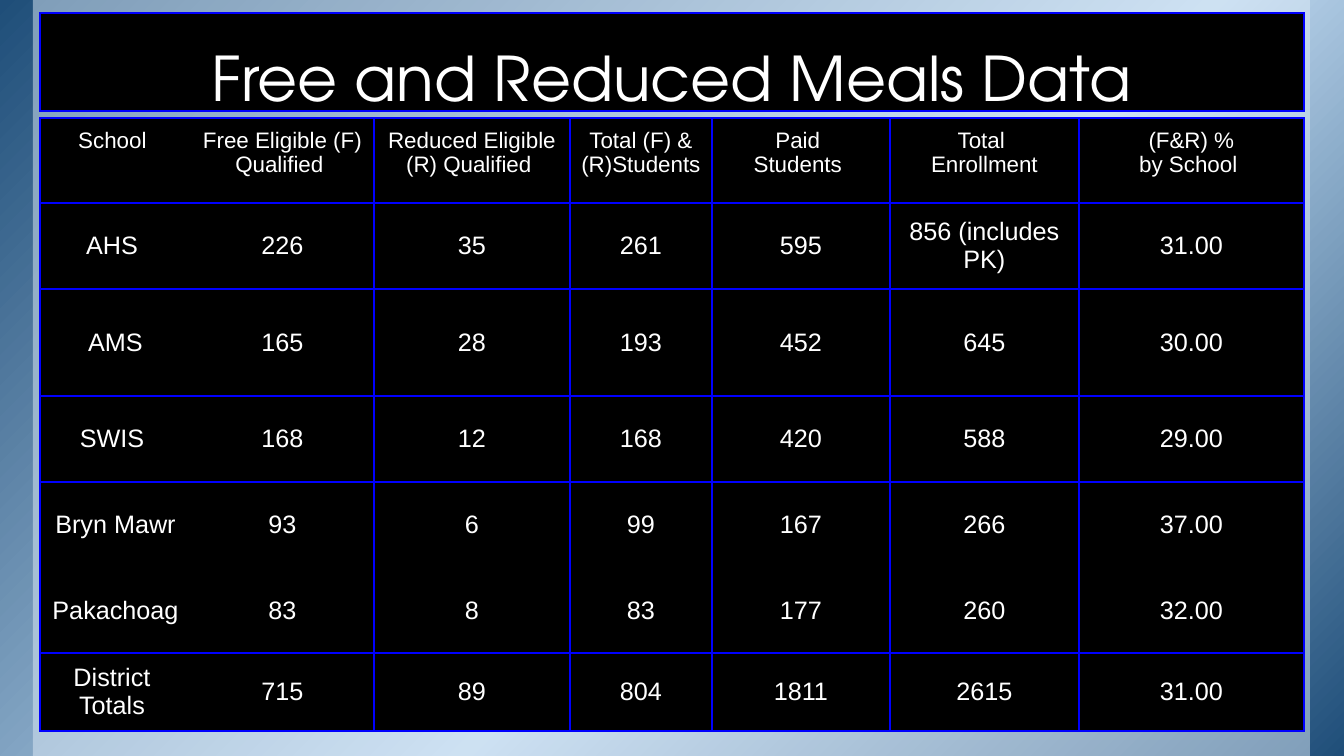
from copy import deepcopy
from dataclasses import dataclass

from lxml.etree import SubElement
from pptx import Presentation
from pptx.dml.color import RGBColor
from pptx.enum.shapes import MSO_SHAPE
from pptx.enum.text import MSO_ANCHOR, PP_ALIGN
from pptx.oxml.ns import qn
from pptx.util import Pt

SCALE = 914400 / 100.8
WIDE, HIGH = 1344, 756


@dataclass(frozen=True)
class Theme:
    navy: str = "1F4E79"
    sky: str = "BDD7EE"
    pale: str = "DEEBF7"
    cell: str = "000000"
    line: str = "0000FF"
    ink: str = "FFFFFF"
    title_font: str = "TeX Gyre Adventor"
    font: str = "Arial"
    title_size: int = 44
    head_size: int = 16
    size: int = 18
    rule: float = 1.5


THEME = Theme()
TITLE = "Free and Reduced Meals Data"
COLS = [151, 183, 196, 142, 178, 189, 225]
ROWS = [85, 86, 107, 86, 86, 85, 78]
HEADS = ["School ", "Free Eligible (F)\nQualified ", "Reduced Eligible (R) Qualified ",
         "Total (F) &\n(R)Students", "Paid \nStudents ", "Total \nEnrollment",
         "(F&R) %\nby School "]
MEALS = [
    ["AHS ", "226", "35", "261", "595", "856 (includes PK)", "31.00"],
    ["AMS", "165", "28", "193", "452", "645", "30.00"],
    ["SWIS ", "168", "12", "168", "420", "588", "29.00"],
    ["Bryn Mawr", "93", "6", "99", "167", "266", "37.00"],
    ["Pakachoag", "83", "8", "83", "177", "260", "32.00"],
    ["District \nTotals ", "715", "89", "804", "1811", "2615", "31.00"],
]
BRYN = 4  # table row with no rule beneath it


def px(count):
    return round(count * SCALE)


def rgb(code):
    return RGBColor.from_string(code)


def add_rect(slide, left, width):
    """Add a full-height rectangle without line or shadow."""
    rect = slide.shapes.add_shape(MSO_SHAPE.RECTANGLE, px(left), 0, px(width), px(HIGH))
    rect.shadow.inherit = False
    rect.line.fill.background()
    return rect


def add_backdrop(slide):
    base = add_rect(slide, 0, WIDE)
    base.fill.gradient()
    base.fill.gradient_angle = 315
    stops = base._element.spPr.find(".//" + qn("a:gsLst"))
    stops.append(deepcopy(stops[0]))
    shades = [(0, THEME.navy), (0.58, THEME.sky), (1, THEME.navy)]
    for stop, (place, shade) in zip(base.fill.gradient_stops, shades):
        stop.position = place
        stop.color.rgb = rgb(shade)

    panel = add_rect(slide, 33, 1277)
    panel.fill.solid()
    panel.fill.fore_color.rgb = rgb(THEME.pale)
    tint = panel._element.spPr.find(qn("a:solidFill"))[0]
    SubElement(tint, qn("a:alpha"), val="50000")


def add_table(slide, top, cols, rows):
    frame = slide.shapes.add_table(len(rows), len(cols), px(40), px(top),
                                   px(sum(cols)), px(sum(rows)))
    table = frame.table
    table.first_row = table.horz_banding = False
    for col, width in zip(table.columns, cols):
        col.width = px(width)
    for row, height in zip(table.rows, rows):
        row.height = px(height)
    return table


def set_cell(cell, bare=()):
    """Fill and rule a cell, leaving the sides named in bare open."""
    props = cell._tc.get_or_add_tcPr()
    for side in "LRTB":
        line = SubElement(props, qn("a:ln" + side), w=str(Pt(THEME.rule)))
        if side in bare:
            SubElement(line, qn("a:noFill"))
        else:
            paint = SubElement(line, qn("a:solidFill"))
            SubElement(paint, qn("a:srgbClr"), val=THEME.line)
    cell.fill.solid()
    cell.fill.fore_color.rgb = rgb(THEME.cell)


def set_text(cell, text, font, size, anchor, inset):
    cell.text = text
    cell.vertical_anchor = anchor
    cell.margin_left = cell.margin_right = px(inset)
    cell.margin_top = cell.margin_bottom = px(inset)
    for para in cell.text_frame.paragraphs:
        para.alignment = PP_ALIGN.CENTER
        para.font.name = font
        para.font.size = Pt(size)
        para.font.color.rgb = rgb(THEME.ink)


def add_title(slide):
    table = add_table(slide, 13, [1264 / 6] * 6, [98])
    for cell in table.iter_cells():
        set_cell(cell)
    first = table.cell(0, 0)
    first.merge(table.cell(0, 5))
    set_text(first, TITLE, THEME.title_font, THEME.title_size, MSO_ANCHOR.BOTTOM, 1)
    first.margin_bottom = 0
    first.text_frame.paragraphs[0].line_spacing = 0.85


def open_sides(row, col):
    """Name the sides of a meals cell that carry no rule."""
    sides = {0: "R", 1: "L"}.get(col, "")
    return sides + {BRYN: "B", BRYN + 1: "T"}.get(row, "")


def add_meals(slide):
    table = add_table(slide, 118, COLS, ROWS)
    for row, texts in enumerate([HEADS] + MEALS):
        size = THEME.size if row else THEME.head_size
        anchor = MSO_ANCHOR.MIDDLE if row else MSO_ANCHOR.TOP
        for col, text in enumerate(texts):
            cell = table.cell(row, col)
            set_cell(cell, open_sides(row, col))
            set_text(cell, text, THEME.font, size, anchor, 10)


def main():
    deck = Presentation()
    deck.slide_width, deck.slide_height = px(WIDE), px(HIGH)
    slide = deck.slides.add_slide(deck.slide_layouts[6])
    add_backdrop(slide)
    add_title(slide)
    add_meals(slide)
    deck.save("out.pptx")


if __name__ == "__main__":
    main()
